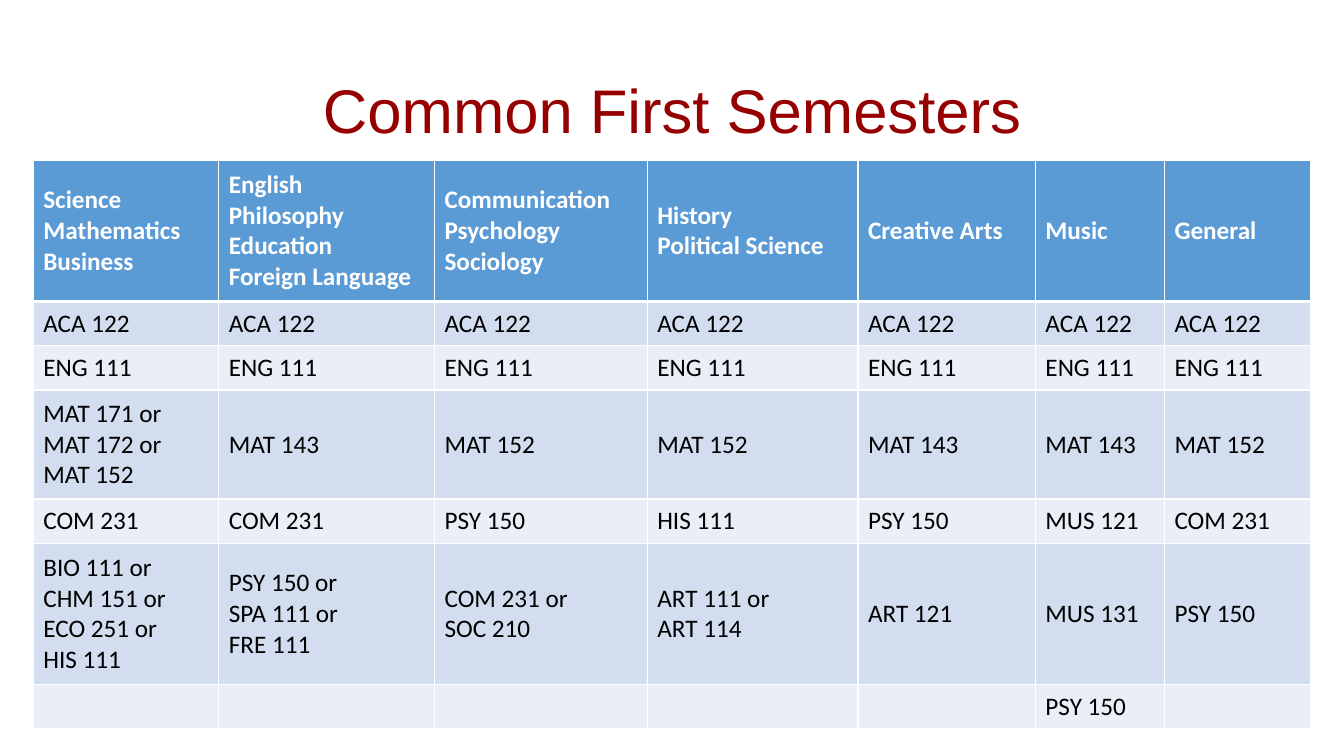
from lxml import etree
from pptx import Presentation
from pptx.dml.color import RGBColor
from pptx.enum.text import MSO_ANCHOR, PP_ALIGN
from pptx.oxml.ns import qn
from pptx.util import Inches, Pt

MIDDLE = MSO_ANCHOR.MIDDLE
LEFT, CENTER = PP_ALIGN.LEFT, PP_ALIGN.CENTER

COLORS = {
    "title": "960000",
    "head": "5B9BD5",
    "odd": "D2DEEF",
    "even": "EAEFF7",
    "white": "FFFFFF",
    "black": "000000",
}

WIDTHS = [1.84, 2.14, 2.11, 2.09, 1.76, 1.28, 1.45]
HEIGHTS = [1.4, 0.44, 0.44, 1.08, 0.44, 1.4, 0.44]

PLANS = [
    ["Science\nMathematics\nBusiness",
     "English\nPhilosophy\nEducation\nForeign Language",
     "Communication\nPsychology\nSociology",
     "History\nPolitical Science", "Creative Arts", "Music", "General"],
    ["ACA 122"] * 7,
    ["ENG 111"] * 7,
    ["MAT 171 or\nMAT 172 or\nMAT 152", "MAT 143", "MAT 152", "MAT 152",
     "MAT 143", "MAT 143", "MAT 152"],
    ["COM 231", "COM 231", "PSY 150", "HIS 111", "PSY 150", "MUS 121",
     "COM 231"],
    ["BIO 111 or\nCHM 151 or\nECO 251 or\nHIS 111",
     "PSY 150 or\nSPA 111 or\nFRE 111", "COM 231 or\nSOC 210",
     "ART 111 or\nART 114", "ART 121", "MUS 131", "PSY 150"],
    ["", "", "", "", "", "PSY 150", ""],
]


def write(frame, text, font="Calibri", size=18, color="black", bold=False,
          align=LEFT, space=1.0):
    """Fill a text frame, one paragraph for each line of text."""
    frame.word_wrap = True
    frame.text = text
    for para in frame.paragraphs:
        para.alignment = align
        para.line_spacing = space
        for item in (para, *para.runs):
            item.font.name = font
            item.font.size = Pt(size)
            item.font.bold = bold
            item.font.color.rgb = RGBColor.from_string(COLORS[color])


class Deck:
    def __init__(self):
        self.show = Presentation()
        self.show.slide_width = Inches(13.33)
        self.show.slide_height = Inches(7.5)
        self.slide = self.show.slides.add_slide(self.show.slide_layouts[5])

    def title(self, text, left, top, width, height):
        shape = self.slide.shapes.title
        shape.left, shape.top = Inches(left), Inches(top)
        shape.width, shape.height = Inches(width), Inches(height)
        shape.text_frame.vertical_anchor = MIDDLE
        write(shape.text_frame, text, font="Arial", size=44, color="title",
              align=CENTER, space=0.9)

    def border(self, cell, side, width):
        props = cell._tc.get_or_add_tcPr()
        line = etree.SubElement(props, qn("a:ln" + side), w=str(Pt(width)))
        fill = etree.SubElement(line, qn("a:solidFill"))
        etree.SubElement(fill, qn("a:srgbClr"), val=COLORS["white"])

    def cell(self, cell, text, row):
        head = row == 0
        # Borders go before the fill; a thick rule sits under the header
        for side in "LRTB":
            thick = (side == "B" and head) or (side == "T" and row == 1)
            self.border(cell, side, 3 if thick else 1)
        shade = "head" if head else "odd" if row % 2 else "even"
        cell.fill.solid()
        cell.fill.fore_color.rgb = RGBColor.from_string(COLORS[shade])
        cell.vertical_anchor = MIDDLE
        write(cell.text_frame, text, bold=head,
              color="white" if head else "black")

    def table(self, rows, left, top, widths, heights):
        table = self.slide.shapes.add_table(
            len(heights), len(widths), Inches(left), Inches(top),
            Inches(sum(widths)), Inches(sum(heights))).table
        for col, width in zip(table.columns, widths):
            col.width = Inches(width)
        for row, height in zip(table.rows, heights):
            row.height = Inches(height)
        for r, texts in enumerate(rows):
            for c, text in enumerate(texts):
                self.cell(table.cell(r, c), text, r)


def main():
    deck = Deck()
    # Heading
    deck.title("Common First Semesters", 0.92, 0.4, 11.5, 1.45)
    # Course plan for each field of study
    deck.table(PLANS, 0.33, 1.59, WIDTHS, HEIGHTS)
    deck.show.save("out.pptx")


if __name__ == "__main__":
    main()
